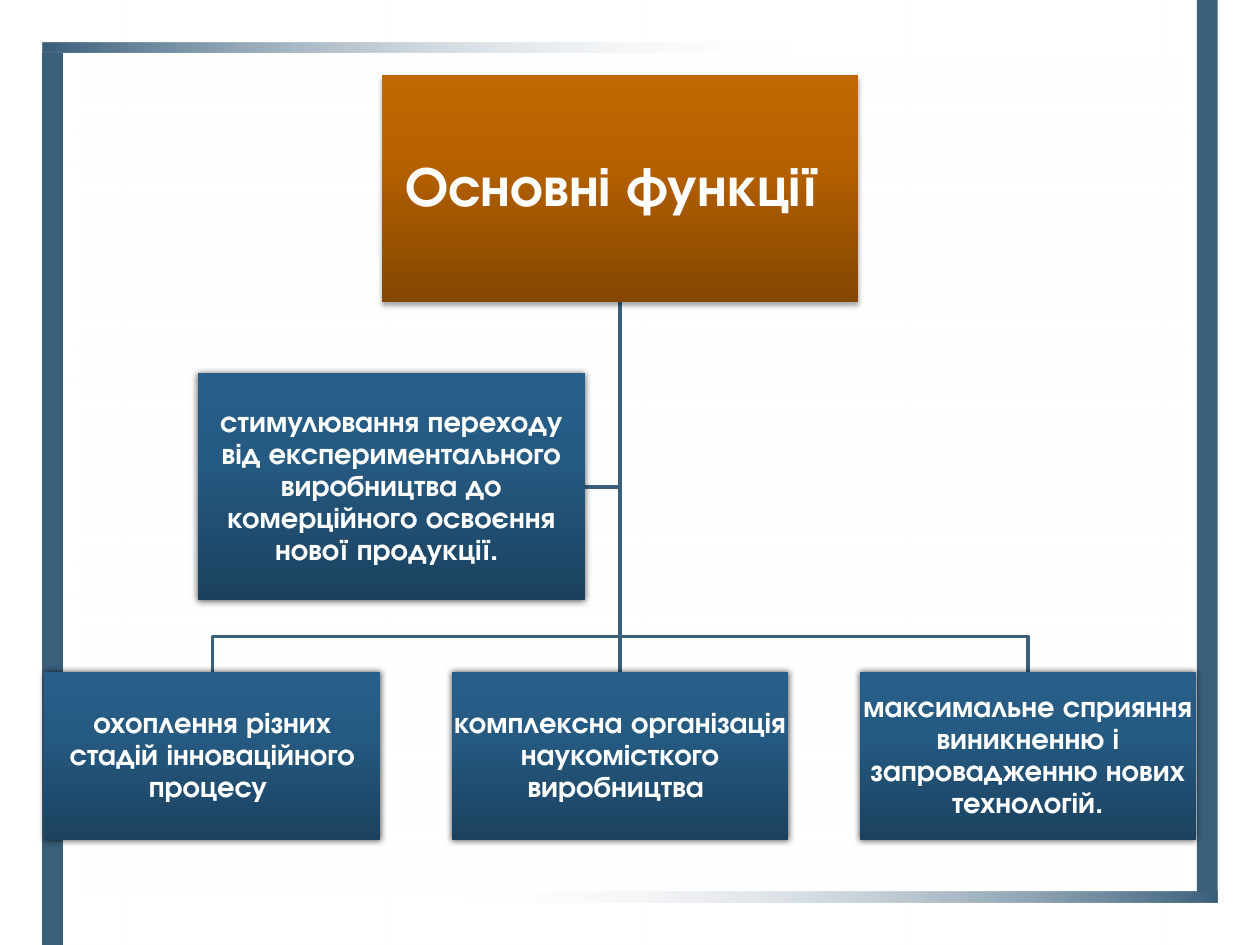
from dataclasses import dataclass

from lxml.etree import SubElement
from pptx import Presentation
from pptx.dml.color import RGBColor
from pptx.enum.shapes import MSO_CONNECTOR, MSO_SHAPE
from pptx.enum.text import MSO_ANCHOR, PP_ALIGN
from pptx.oxml.ns import qn
from pptx.util import Cm, Pt

COLOURS = {
    "slate": "3A5F7B",
    "white": "FFFFFF",
    "black": "000000",
    "orange_dark": "844700",
    "orange_mid": "B86200",
    "orange_light": "C16700",
    "blue_dark": "1B415F",
    "blue_mid": "255B83",
    "blue_light": "275F8A",
}
FONT = "TeX Gyre Adventor"
PANEL_STOPS = [(0, "white", 50), (100, "white", 0)]
BAND_STOPS = [(0, "slate", 100), (65, "white", 0), (100, "white", 0)]
CHILD_TEXTS = [
    "охоплення різних стадій інноваційного процесу ",
    "комплексна організація наукомісткого виробництва ",
    "максимальне сприяння виникненню і запровадженню нових технологій.",
]


@dataclass
class Area:
    left: float
    top: float
    width: float
    height: float

    @property
    def middle(self) -> float:
        return self.left + self.width / 2

    @property
    def bottom(self) -> float:
        return self.top + self.height


@dataclass
class CardStyle:
    hue: str
    size: int
    inset: float
    shadow_alpha: int
    blur: float
    distance: float


ROOT_STYLE = CardStyle("orange", 32, 0.05, 35, 3.1, 2)
BRANCH_STYLE = CardStyle("blue", 17, 0.03, 64, 4, 0)


def apply_format(target, values: dict) -> None:
    """Set every attribute named in values."""
    for name, value in values.items():
        setattr(target, name, value)


def add_colour(parent, colour: str, alpha: int) -> None:
    """Add a colour element with opacity in percent."""
    element = SubElement(parent, qn("a:srgbClr"), val=COLOURS[colour])
    SubElement(element, qn("a:alpha"), val=str(alpha * 1000))


def add_block(page, area: Area):
    """Add a rectangle without outline or shadow."""
    block = page.shapes.add_shape(
        MSO_SHAPE.RECTANGLE, Cm(area.left), Cm(area.top), Cm(area.width), Cm(area.height)
    )
    block.shadow.inherit = False
    block.line.fill.background()
    return block


def add_bar(page, area: Area) -> None:
    """Add a solid slate frame bar."""
    bar = add_block(page, area)
    bar.fill.solid()
    bar.fill.fore_color.rgb = RGBColor.from_string(COLOURS["slate"])


def add_gradient_block(page, area: Area, stops: list, angle: int):
    """Add a rectangle filled with gradient stops."""
    block = add_block(page, area)
    block.fill.gradient()
    block.fill.gradient_angle = angle
    stop_list = block._element.spPr.find(qn("a:gradFill")).find(qn("a:gsLst"))
    for stop in list(stop_list):
        stop_list.remove(stop)
    for position, colour, alpha in stops:
        stop = SubElement(stop_list, qn("a:gs"), pos=str(position * 1000))
        add_colour(stop, colour, alpha)
    return block


def add_card(page, area: Area, text: str, style: CardStyle) -> None:
    """Add a shaded card with centred bold text."""
    tones = zip((0, 65, 100), ("dark", "mid", "light"))
    stops = [(position, f"{style.hue}_{tone}", 100) for position, tone in tones]
    card = add_gradient_block(page, area, stops, 90)
    shadow = SubElement(
        card._element.spPr.find(qn("a:effectLst")),
        qn("a:outerShdw"),
        blurRad=str(Pt(style.blur)),
        dist=str(Pt(style.distance)),
        dir="5400000",
        rotWithShape="0",
    )
    add_colour(shadow, "black", style.shadow_alpha)
    frame = card.text_frame
    inset = Cm(style.inset)
    sides = ("left", "top", "right", "bottom")
    apply_format(frame, {f"margin_{side}": inset for side in sides})
    apply_format(frame, {"word_wrap": True, "vertical_anchor": MSO_ANCHOR.MIDDLE})
    para = frame.paragraphs[0]
    apply_format(para, {"alignment": PP_ALIGN.CENTER, "line_spacing": 0.9})
    span = para.add_run()
    span.text = text
    apply_format(span.font, {"name": FONT, "size": Pt(style.size), "bold": True})
    span.font.color.rgb = RGBColor.from_string(COLOURS["white"])


def style_link(link) -> None:
    """Give a link its slate line."""
    link.line.width = Pt(2)
    link.line.color.rgb = RGBColor.from_string(COLOURS["slate"])


def add_elbow(page, points: list) -> None:
    """Add an open bent link through the points."""
    corners = [(Cm(x), Cm(y)) for x, y in points]
    builder = page.shapes.build_freeform(*corners[0])
    builder.add_line_segments(corners[1:], close=False)
    elbow = builder.convert_to_shape()
    elbow.shadow.inherit = False
    elbow.fill.background()
    style_link(elbow)


def add_straight(page, x: float, top: float, bottom: float) -> None:
    """Add a vertical link."""
    link = page.shapes.add_connector(
        MSO_CONNECTOR.STRAIGHT, Cm(x), Cm(top), Cm(x), Cm(bottom)
    )
    style_link(link)
    SubElement(link._element.spPr, qn("a:effectLst"))


def add_frame(page) -> None:
    """Draw the decorative slide frame."""
    add_gradient_block(page, Area(1.27, 0, 22.86, 17.98), PANEL_STOPS, 180)
    add_gradient_block(page, Area(1.27, 1.07, 22.86, 17.98), PANEL_STOPS, 0)
    add_bar(page, Area(24.13, 0, 0.42, 17.98))
    add_bar(page, Area(0.85, 1.07, 0.42, 17.98))
    add_gradient_block(page, Area(1.27, 17.98, 23.28, 0.21), BAND_STOPS, 180)
    add_gradient_block(page, Area(0.85, 0.86, 23.28, 0.21), BAND_STOPS, 0)


def add_chart_tree(page) -> None:
    """Draw the links and cards of the hierarchy."""
    root = Area(7.7, 1.52, 9.6, 4.57)
    assistant = Area(3.99, 7.53, 7.8, 4.57)
    children = [Area(0.89 + 8.22 * index, 13.54, 6.78, 3.4) for index in range(3)]
    start = (root.middle, root.bottom)
    level = assistant.top + assistant.height / 2
    junction = 12.83
    add_elbow(
        page,
        [start, (root.middle, level), (assistant.left + assistant.width, level)],
    )
    for child in (children[0], children[2]):
        turns = [(root.middle, junction), (child.middle, junction)]
        add_elbow(page, [start, *turns, (child.middle, child.top)])
    add_straight(page, root.middle, root.bottom, children[1].top)
    add_card(page, root, "Основні функції ", ROOT_STYLE)
    for child, text in zip(children, CHILD_TEXTS):
        add_card(page, child, text, BRANCH_STYLE)
    assistant_text = (
        "стимулювання переходу від експериментального виробництва "
        "до комерційного освоєння нової продукції. "
    )
    add_card(page, assistant, assistant_text, BRANCH_STYLE)


def main() -> None:
    """Build and save the deck."""
    deck = Presentation()
    apply_format(deck, {"slide_width": Cm(25.4), "slide_height": Cm(19.05)})
    page = deck.slides.add_slide(deck.slide_layouts[6])
    add_frame(page)
    add_chart_tree(page)
    deck.save("out.pptx")


if __name__ == "__main__":
    main()
